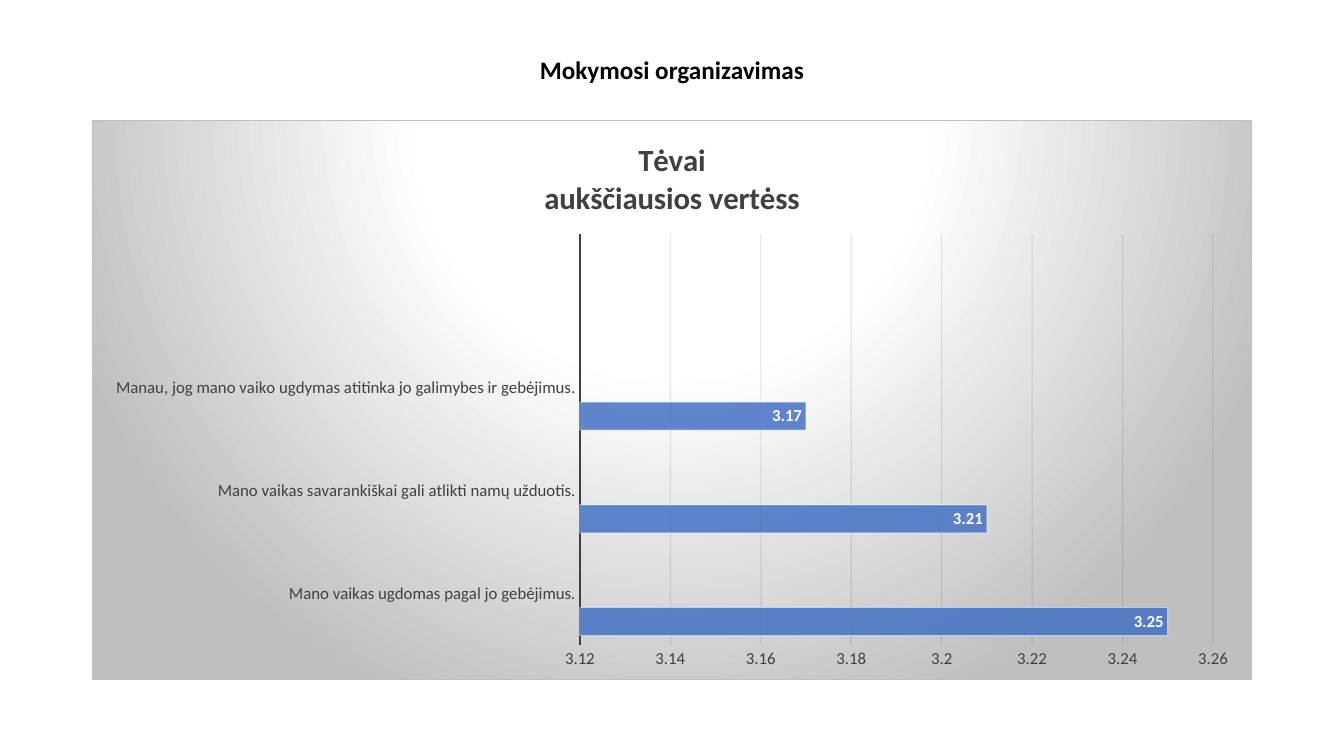
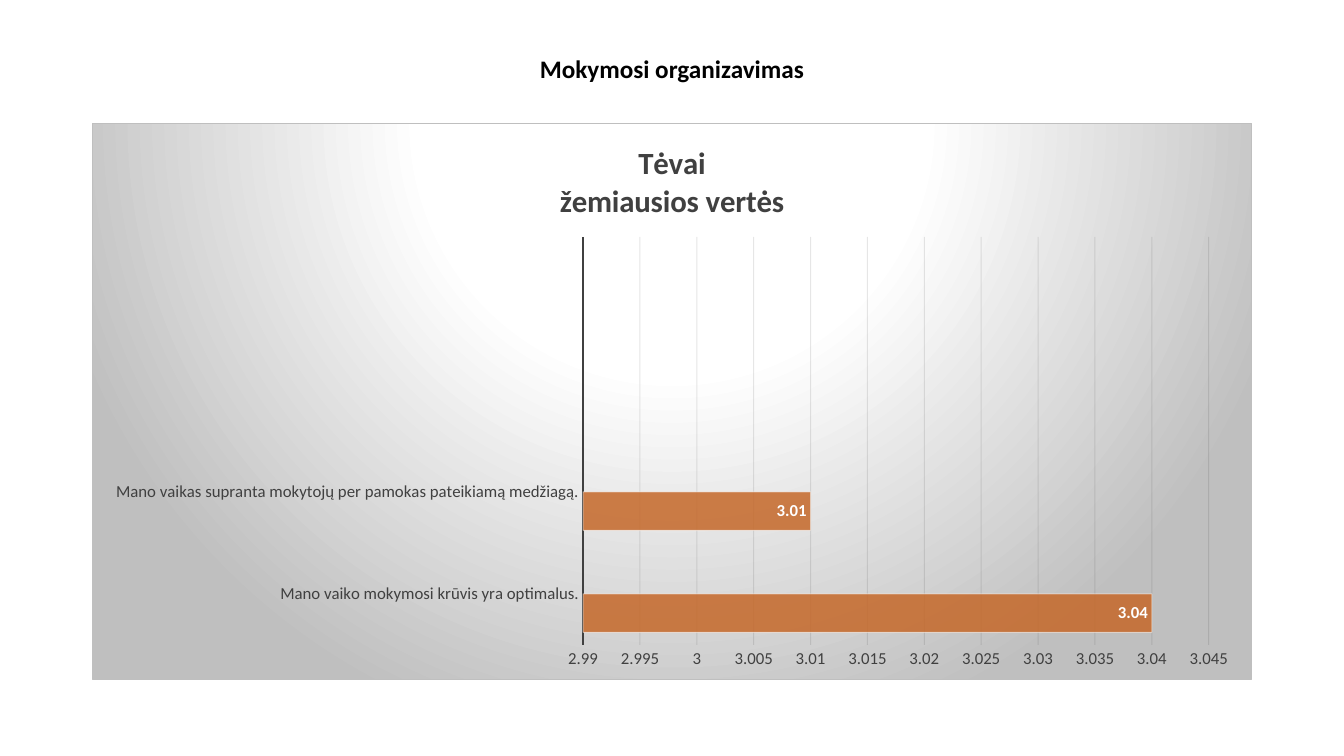
from lxml.etree import SubElement
from pptx import Presentation
from pptx.chart.data import CategoryChartData
from pptx.dml.color import RGBColor
from pptx.enum.chart import XL_CHART_TYPE, XL_LABEL_POSITION, XL_TICK_MARK
from pptx.enum.text import MSO_ANCHOR, PP_ALIGN
from pptx.oxml import parse_xml
from pptx.oxml.ns import nsdecls, qn
from pptx.util import Pt

FONT = "Calibri"
BLACK = RGBColor(0x00, 0x00, 0x00)
WHITE = RGBColor(0xFF, 0xFF, 0xFF)
DARK = RGBColor(0x40, 0x40, 0x40)
GRID = RGBColor(0x0D, 0x0D, 0x0D)
SILVER = RGBColor(0xBF, 0xBF, 0xBF)
BLUE = RGBColor(0x44, 0x72, 0xC4)
RUST = RGBColor(0xC5, 0x68, 0x29)
ORANGE = RGBColor(0xED, 0x7D, 0x31)
GRAY = RGBColor(0xA5, 0xA5, 0xA5)

LEFT, WIDTH = 66, 828
TITLE_TOP = 28.8
CHART_BOTTOM = 486
SLOTS = 4

SLIDES = [
    dict(
        title_height=44.6,
        chart_top=85.9,
        heading=["Tėvai", "aukščiausios vertėss"],
        bars=[
            ("Mano vaikas ugdomas pagal jo gebėjimus.", 3.25),
            ("Mano vaikas savarankiškai gali atlikti namų užduotis.", 3.21),
            ("Manau, jog mano vaiko ugdymas atitinka jo galimybes ir gebėjimus.", 3.17),
        ],
        colors=[BLUE, ORANGE, GRAY],
        scale=(3.12, 3.26, 0.02),
    ),
    dict(
        title_height=43.2,
        chart_top=88,
        heading=["Tėvai", "žemiausios vertės"],
        bars=[
            ("Mano vaiko mokymosi krūvis yra optimalus.", 3.04),
            ("Mano vaikas supranta mokytojų per pamokas pateikiamą medžiagą.", 3.01),
        ],
        colors=[RUST, ORANGE],
        scale=(2.99, 3.045, 0.005),
    ),
]


def style_font(font, size, color, bold=False):
    font.name = FONT
    font.size = Pt(size)
    font.bold = bold
    font.color.rgb = color


def style_line(line, color, width):
    line.color.rgb = color
    line.width = Pt(width)


def set_opacity(element, *percents):
    for color, percent in zip(element.iter(qn("a:srgbClr")), percents):
        SubElement(color, qn("a:alpha"), val=str(percent * 1000))


def add_title(s, x, y, w, h):
    tf = s.shapes.add_textbox(Pt(x), Pt(y), Pt(w), Pt(h)).text_frame
    tf.word_wrap = True
    tf.vertical_anchor = MSO_ANCHOR.MIDDLE
    p = tf.paragraphs[0]
    p.alignment = PP_ALIGN.CENTER
    p.line_spacing = 0.9
    r = p.add_run()
    r.text = "Mokymosi organizavimas"
    style_font(r.font, 18, BLACK, True)


def fill_chart_area(chart):
    stops = "".join(
        f'<a:gs pos="{pos * 1000}"><a:srgbClr val="{color}"/></a:gs>'
        for pos, color in ((0, WHITE), (39, WHITE), (100, SILVER))
    )
    area = parse_xml(
        f'<c:spPr {nsdecls("c", "a")}><a:gradFill><a:gsLst>{stops}</a:gsLst>'
        '<a:path path="circle"><a:fillToRect l="50000" t="-80000" r="50000" b="180000"/>'
        f'</a:path></a:gradFill><a:ln w="{Pt(0.75)}"><a:solidFill>'
        f'<a:srgbClr val="{SILVER}"/></a:solidFill></a:ln></c:spPr>'
    )
    chart._chartSpace.find(qn("c:chart")).addnext(area)


def add_heading(chart, lines):
    chart.has_title = True
    chart.chart_title.include_in_layout = False
    tf = chart.chart_title.text_frame
    for i, text in enumerate(lines):
        p = tf.add_paragraph() if i else tf.paragraphs[0]
        p.alignment = PP_ALIGN.CENTER
        r = p.add_run()
        r.text = text
        style_font(r.font, 22, DARK, True)


def style_axes(chart, scale):
    for axis in (chart.category_axis, chart.value_axis):
        axis.major_tick_mark = axis.minor_tick_mark = XL_TICK_MARK.NONE
        style_font(axis.tick_labels.font, 12, DARK)
    style_line(chart.category_axis.format.line, DARK, 1.5)
    chart.category_axis.has_major_gridlines = False
    values = chart.value_axis
    values.minimum_scale, values.maximum_scale, values.major_unit = scale
    values.format.line.fill.background()
    values.has_major_gridlines = True
    style_line(values.major_gridlines.format.line, GRID, 0.75)
    set_opacity(values._element.find(qn("c:majorGridlines")), 10)


def style_series(series, color):
    series.format.fill.solid()
    series.format.fill.fore_color.rgb = color
    style_line(series.format.line, WHITE, 0.75)
    set_opacity(series._element.find(qn("c:spPr")), 85, 50)
    labels = series.data_labels
    labels.show_value = True
    labels.position = XL_LABEL_POSITION.INSIDE_END
    style_font(labels.font, 12, WHITE, True)


def add_bar_chart(s, x, y, w, h, heading, bars, colors, scale):
    rows = bars + [("", None)] * (SLOTS - len(bars))
    data = CategoryChartData()
    data.categories = [name for name, _ in rows]
    for i in range(len(colors)):
        values = [None if i else value for _, value in rows]
        data.add_series(f"Series {i + 1}", values)
    chart = s.shapes.add_chart(
        XL_CHART_TYPE.BAR_CLUSTERED, Pt(x), Pt(y), Pt(w), Pt(h), data
    ).chart
    style_font(chart.font, 10, BLACK)
    chart.has_legend = False
    fill_chart_area(chart)
    add_heading(chart, heading)
    style_axes(chart, scale)
    plot = chart.plots[0]
    plot.gap_width = 65
    plot.vary_by_categories = False
    for series, color in zip(plot.series, colors):
        style_series(series, color)


def add_chart_slide(prs, title_height, chart_top, **content):
    s = prs.slides.add_slide(prs.slide_layouts[6])
    add_title(s, LEFT, TITLE_TOP, WIDTH, title_height)
    add_bar_chart(s, LEFT, chart_top, WIDTH, CHART_BOTTOM - chart_top, **content)


def main():
    prs = Presentation()
    prs.slide_width, prs.slide_height = Pt(960), Pt(540)
    for slide in SLIDES:
        add_chart_slide(prs, **slide)
    prs.save("out.pptx")


if __name__ == "__main__":
    main()
